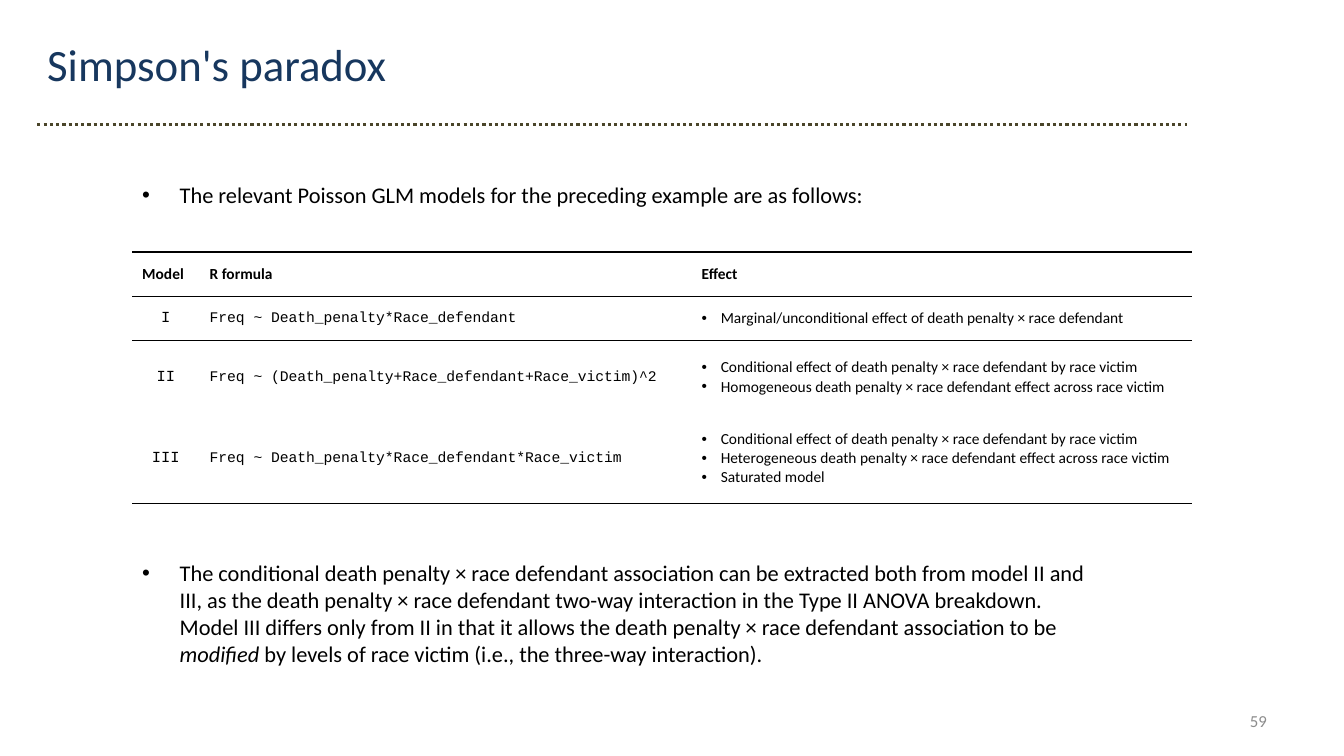
from lxml import etree
from pptx import Presentation
from pptx.dml.color import RGBColor
from pptx.enum import dml, shapes, text
from pptx.oxml.ns import qn
from pptx.util import Cm, Pt

NAVY = RGBColor(0x17, 0x37, 0x5E)
OLIVE = RGBColor(0x4A, 0x45, 0x2A)
GREY = RGBColor(0x8C, 0x8C, 0x8C)
BLACK = RGBColor(0, 0, 0)

SANS, MONO = "Calibri", "Courier New"
CENTER, RIGHT = text.PP_ALIGN.CENTER, text.PP_ALIGN.RIGHT
MIDDLE = text.MSO_ANCHOR.MIDDLE

INTRO = ["The relevant Poisson GLM models for the preceding example are as follows:"]
CONCLUSION = [
    "The conditional death penalty × race defendant association can be extracted both "
    "from model II and III, as the death penalty × race defendant two-way interaction in "
    "the Type II ANOVA breakdown. Model III differs only from II in that it allows the "
    "death penalty × race defendant association to be ",
    ("modified", {"italic": True}),
    " by levels of race victim (i.e., the three-way interaction).",
]

HEADINGS = ["Model", "R formula", "Effect"]
CONDITIONAL = "Conditional effect of death penalty × race defendant by race victim"
MODELS = [
    ("I", "Freq ~ Death_penalty*Race_defendant",
     ["Marginal/unconditional effect of death penalty × race defendant"]),
    ("II", "Freq ~ (Death_penalty+Race_defendant+Race_victim)^2",
     [CONDITIONAL,
      "Homogeneous death penalty × race defendant effect across race victim"]),
    ("III", "Freq ~ Death_penalty*Race_defendant*Race_victim",
     [CONDITIONAL,
      "Heterogeneous death penalty × race defendant effect across race victim",
      "Saturated model"]),
]
COLUMN_SHARES = [1.7, 12.4, 12.6]
ROW_SHARES = [1.12, 1.12, 1.83, 2.26]
RULED_EDGES = {0, 1, 2, 4}


def write(para, parts, size, color=BLACK, name=SANS, bold=False, align=None, indent=None):
    """Fill a paragraph with strings or (string, font values) pairs; indent adds a bullet."""
    para.alignment = align
    for part in parts:
        words, extra = part if isinstance(part, tuple) else (part, {})
        span = para.add_run()
        span.text = words
        span.font.color.rgb = color
        for key, value in {"size": Pt(size), "name": name, "bold": bold, **extra}.items():
            setattr(span.font, key, value)
    if indent:
        props = para._p.get_or_add_pPr()
        props.set("marL", str(Cm(indent)))
        props.set("indent", str(-Cm(indent)))
        etree.SubElement(props, qn("a:buFont"), typeface="Arial")
        etree.SubElement(props, qn("a:buChar"), char="•")


def add_text(page, box, parts, size, anchor=text.MSO_ANCHOR.TOP, **style):
    frame = page.shapes.add_textbox(*map(Cm, box)).text_frame
    frame.word_wrap = True
    frame.vertical_anchor = anchor
    write(frame.paragraphs[0], parts, size, **style)


def add_header(page, box):
    left, top, width, height = box
    add_text(page, (left, top, width, 1.63), ["Simpson's paradox"], 32, color=NAVY)
    bottom = top + height
    rule = page.shapes.add_connector(
        shapes.MSO_CONNECTOR.STRAIGHT, Cm(left), Cm(bottom), Cm(left + 28.98), Cm(bottom))
    rule.line.color.rgb = OLIVE
    rule.line.width = Pt(2.25)
    rule.line.dash_style = dml.MSO_LINE.ROUND_DOT
    etree.SubElement(rule._element.spPr, qn("a:effectLst"))


def set_borders(cell, ruled_above, ruled_below):
    cell.fill.background()
    props = cell._tc.get_or_add_tcPr()
    sides = {"L": False, "R": False, "T": ruled_above, "B": ruled_below}
    for position, (side, ruled) in enumerate(sides.items()):
        line = etree.Element(qn(f"a:ln{side}"), w=str(Pt(1)))
        fill = etree.SubElement(line, qn("a:solidFill" if ruled else "a:noFill"))
        if ruled:
            etree.SubElement(fill, qn("a:srgbClr"), val=str(BLACK))
        props.insert(position, line)


def add_model_table(page, box):
    left, top, width, height = box
    table = page.shapes.add_table(
        len(ROW_SHARES), len(COLUMN_SHARES), *map(Cm, box)).table
    table.first_row = table.horz_banding = False
    for column, share in zip(table.columns, COLUMN_SHARES):
        column.width = Cm(width * share / sum(COLUMN_SHARES))
    for index, (row, share) in enumerate(zip(table.rows, ROW_SHARES)):
        row.height = Cm(height * share / sum(ROW_SHARES))
        for cell in row.cells:
            cell.vertical_anchor = MIDDLE
            set_borders(cell, index in RULED_EDGES, index + 1 in RULED_EDGES)

    for column, heading in enumerate(HEADINGS):
        write(table.cell(0, column).text_frame.paragraphs[0], [heading], 11, bold=True)
    for row, (model, formula, effects) in enumerate(MODELS, start=1):
        number, code, effect_cell = (table.cell(row, column).text_frame for column in range(3))
        write(number.paragraphs[0], [model], 11, name=MONO, align=CENTER)
        write(code.paragraphs[0], [formula], 10.5, name=MONO)
        for position, effect in enumerate(effects):
            para = effect_cell.add_paragraph() if position else effect_cell.paragraphs[0]
            write(para, [effect], 11, indent=0.48)


def add_body(page, box):
    left, top, width, height = box
    add_text(page, (left, top, width, 1), INTRO, 16, indent=0.95)
    add_model_table(page, (left, top + 1.9, 26.7, 6.33))
    add_text(page, (left, top + 9.52, width, height - 9.52), CONCLUSION, 16, indent=0.95)


def main():
    deck = Presentation()
    deck.slide_width, deck.slide_height = Cm(33.87), Cm(19.05)
    page = deck.slides.add_slide(deck.slide_layouts[6])
    add_header(page, (0.94, 0.81, 29.6, 2.32))
    add_body(page, (3.33, 4.45, 24.8, 13.1))
    add_text(page, (24.28, 17.65, 7.9, 1.02), ["59"], 12, anchor=MIDDLE,
             color=GREY, align=RIGHT)
    deck.save("out.pptx")


if __name__ == "__main__":
    main()
